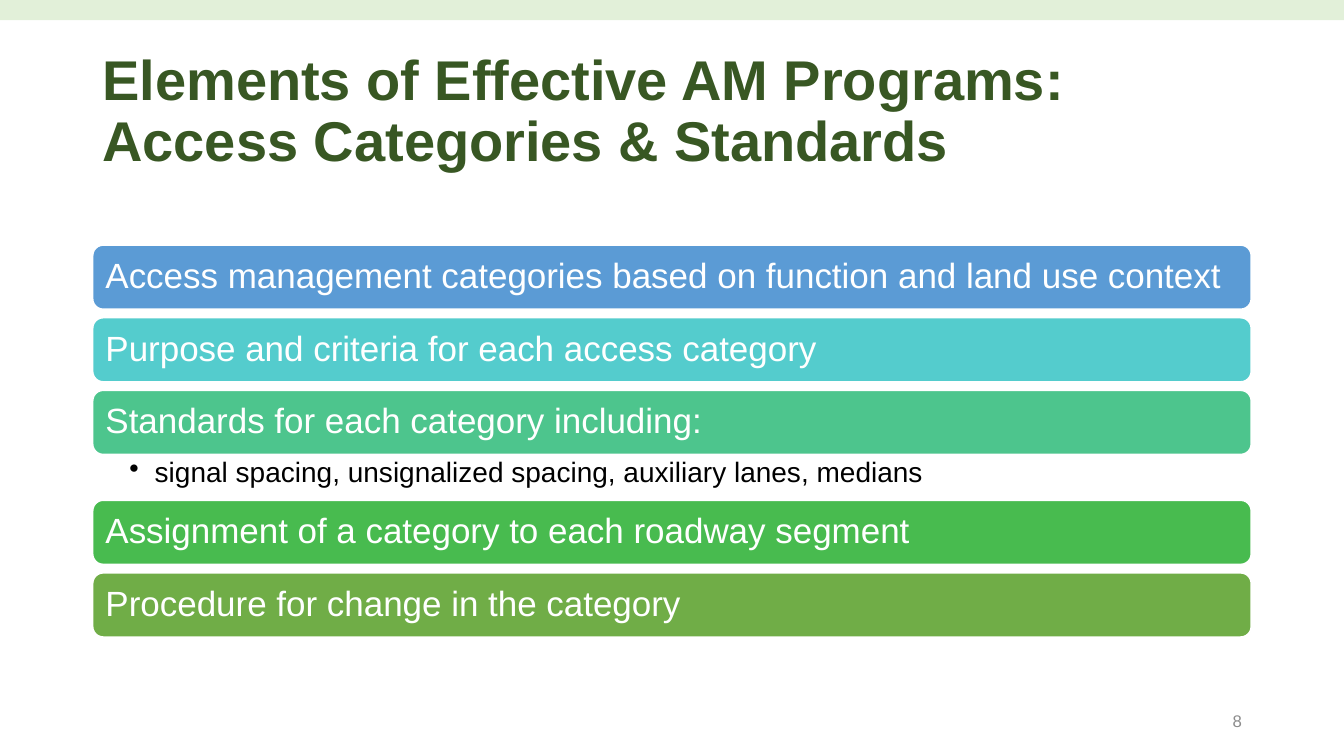
"""Build the slide on access categories and standards."""
from dataclasses import dataclass

from lxml import etree
from pptx import Presentation
from pptx import util as u
from pptx.dml.color import RGBColor
from pptx.enum import shapes, text
from pptx.oxml.ns import qn


@dataclass(frozen=True)
class Theme:
    font: str = "Arial"
    band: str = "E2F0D9"
    title: str = "385723"
    white: str = "FFFFFF"
    body: str = "000000"
    number: str = "8C8C8C"
    title_size: int = 40
    bar_size: int = 25
    detail_size: int = 20
    number_size: int = 12


THEME = Theme()
LEFT, WIDTH = 2.33, 29.21
BAR_HEIGHT, BAR_GAP, DETAIL_HEIGHT = 1.63, 0.2, 1.14
BARS = [
    ("Access management categories based on function and land use context", "5B9BD5", None),
    ("Purpose and criteria for each access category", "54CCCD", None),
    ("Standards for each category including:", "4DC58D",
     "signal spacing, unsignalized spacing, auxiliary lanes, medians"),
    ("Assignment of a category to each roadway segment", "48BB4F", None),
    ("Procedure for change in the category", "70AD47", None),
]


def write(sp, content, size, color, bold=False, align=text.PP_ALIGN.LEFT,
          anchor=text.MSO_ANCHOR.MIDDLE, insets=(0.25, 0.13, 0.25, 0.13),
          spacing=0.9, bullet=None):
    tf = sp.text_frame
    tf.word_wrap = True
    tf.vertical_anchor = anchor
    tf.margin_left, tf.margin_top, tf.margin_right, tf.margin_bottom = map(u.Cm, insets)
    p = tf.paragraphs[0]
    p.alignment = align
    p.line_spacing = spacing
    if bullet:
        pPr = p._p.get_or_add_pPr()
        pPr.set("marL", str(u.Cm(0.64)))
        pPr.set("indent", str(u.Cm(-0.64)))
        etree.SubElement(pPr, qn("a:buChar")).set("char", bullet)
    r = p.add_run()
    r.text = content
    r.font.name = THEME.font
    r.font.size = u.Pt(size)
    r.font.bold = bold
    r.font.color.rgb = RGBColor.from_string(color)


class SlideBuilder:
    """Hold the theme and the current slide."""

    def __init__(self, prs, theme):
        self.theme = theme
        self.s = prs.slides.add_slide(prs.slide_layouts[6])

    def shape(self, kind, x, y, w, h, fill, line=None):
        sp = self.s.shapes.add_shape(kind, *map(u.Cm, (x, y, w, h)))
        sp.shadow.inherit = False
        sp.fill.solid()
        sp.fill.fore_color.rgb = RGBColor.from_string(fill)
        if line:
            sp.line.color.rgb = RGBColor.from_string(line)
            sp.line.width = u.Pt(1.5)
        else:
            sp.line.fill.background()
        return sp

    def label(self, x, y, w, h, content, size, color, **style):
        sp = self.s.shapes.add_textbox(*map(u.Cm, (x, y, w, h)))
        write(sp, content, size, color, **style)

    def band(self, width):
        self.shape(shapes.MSO_SHAPE.RECTANGLE, 0, 0, width, 0.51, self.theme.band)

    def title(self, content):
        self.label(LEFT, 1.01, WIDTH, 3.68, content,
                   self.theme.title_size, self.theme.title, bold=True)

    def bar(self, y, content, fill):
        sp = self.shape(shapes.MSO_SHAPE.ROUNDED_RECTANGLE, LEFT, y, WIDTH,
                        BAR_HEIGHT, fill, self.theme.white)
        write(sp, content, self.theme.bar_size, self.theme.white,
              insets=(0.25, 0.25, 0.25, 0.25))

    def detail(self, y, content):
        self.label(LEFT, y, WIDTH, DETAIL_HEIGHT, content,
                   self.theme.detail_size, self.theme.body, bullet="•",
                   anchor=text.MSO_ANCHOR.TOP, insets=(0.93, 0.08, 0.48, 0.08))

    def number(self, content):
        self.label(23.93, 17.65, 7.62, 1.01, content, self.theme.number_size,
                   self.theme.number, align=text.PP_ALIGN.RIGHT, spacing=1.0)


def main():
    prs = Presentation()
    prs.slide_width, prs.slide_height = u.Cm(33.87), u.Cm(19.05)
    slide = SlideBuilder(prs, THEME)
    slide.band(33.87)
    slide.title("Elements of Effective AM Programs: Access Categories & Standards")
    y = 6.17
    for content, fill, detail in BARS:
        slide.bar(y, content, fill)
        y += BAR_HEIGHT
        if detail:
            slide.detail(y, detail)
            y += DETAIL_HEIGHT
        else:
            y += BAR_GAP
    slide.number("8")
    prs.save("out.pptx")


if __name__ == "__main__":
    main()
